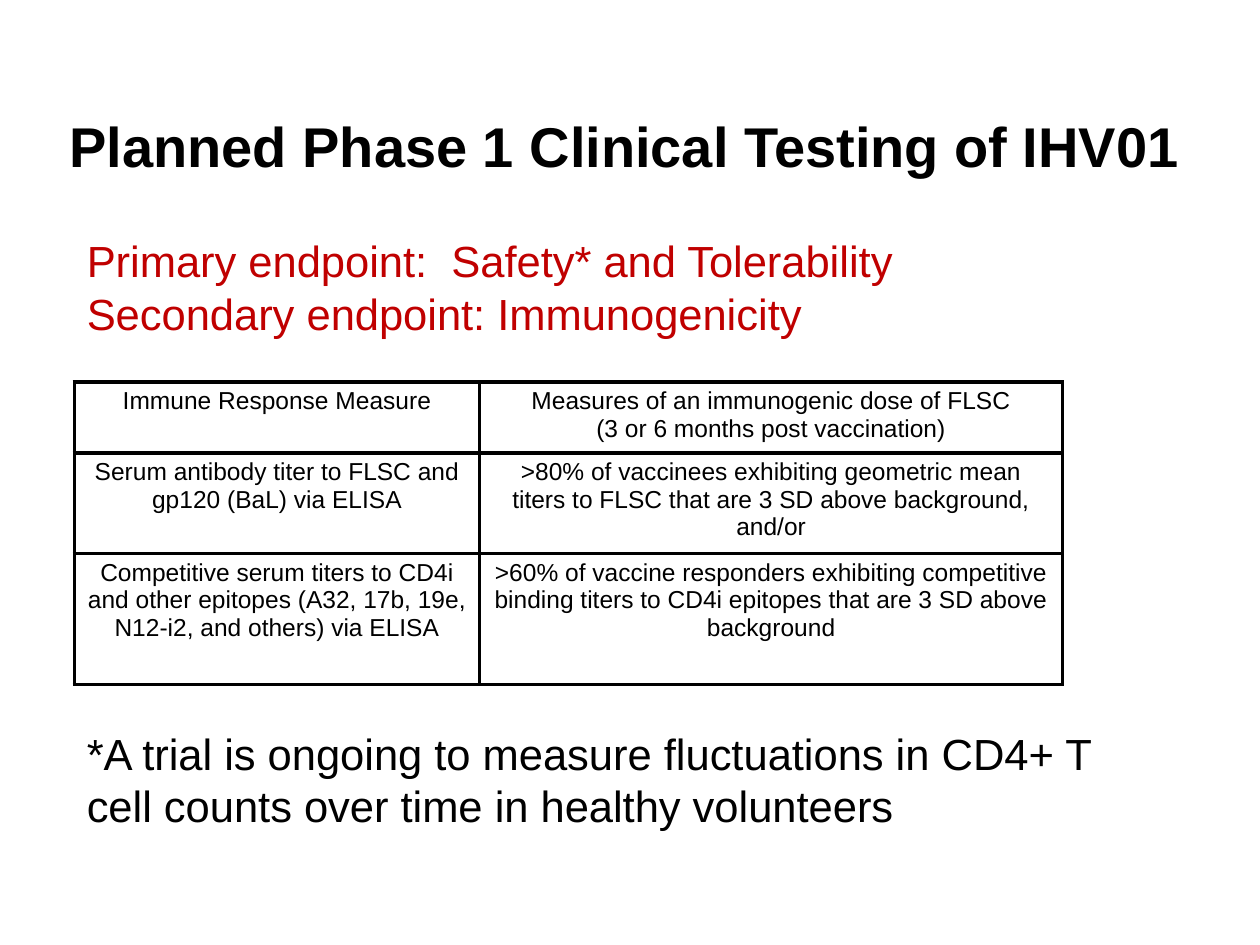
from pptx import Presentation
from pptx.util import Cm, Pt
from pptx.dml.color import RGBColor
from pptx.enum.text import MSO_ANCHOR, MSO_AUTO_SIZE, PP_ALIGN
from pptx.oxml import parse_xml
from pptx.oxml.ns import nsdecls

BLACK = RGBColor(0x00, 0x00, 0x00)
WHITE = RGBColor(0xFF, 0xFF, 0xFF)
RED = RGBColor(0xC0, 0x00, 0x00)
FONT = "Arial"

# Content
TITLE = "Planned Phase 1 Clinical Testing of IHV01"
ENDPOINTS = "Primary endpoint:  Safety* and Tolerability\nSecondary endpoint: Immunogenicity"
FOOTNOTE = ("*A trial is ongoing to measure fluctuations in CD4+ T "
            "cell counts over time in healthy volunteers")
ROWS = [
    ("Immune Response Measure",
     "Measures of an immunogenic dose of FLSC\n(3 or 6 months post vaccination)"),
    ("Serum antibody titer to FLSC and gp120 (BaL) via ELISA",
     ">80% of vaccinees exhibiting geometric mean titers to FLSC "
     "that are 3 SD above background, and/or"),
    ("Competitive serum titers to CD4i and other epitopes "
     "(A32, 17b, 19e, N12-i2, and others) via ELISA",
     ">60% of vaccine responders exhibiting competitive binding titers "
     "to CD4i epitopes that are 3 SD above background"),
]

# Layout, in cm
LEFT = 1.5
COL_WIDTHS = (8.17, 11.75)
ROW_HEIGHTS = (1.43, 2.03, 2.64)


def set_text(tf, text, size, color, align=PP_ALIGN.LEFT, bold=False):
    tf.text = text
    tf.word_wrap = True
    for p in tf.paragraphs:
        p.alignment = align
        for r in p.runs:
            r.font.name, r.font.size, r.font.bold = FONT, Pt(size), bold
            r.font.color.rgb = color


def add_text(slide, text, top, width, color):
    sp = slide.shapes.add_textbox(Cm(LEFT), Cm(top), Cm(width), Cm(2.39))
    set_text(sp.text_frame, text, 24.9, color)
    sp.text_frame.auto_size = MSO_AUTO_SIZE.SHAPE_TO_FIT_TEXT


def add_borders(cell):
    tcPr = cell._tc.get_or_add_tcPr()
    for i, side in enumerate(("lnL", "lnR", "lnT", "lnB")):
        tcPr.insert(i, parse_xml(
            f'<a:{side} {nsdecls("a")} w="{Pt(2.25)}"><a:solidFill>'
            f'<a:srgbClr val="{BLACK}"/></a:solidFill></a:{side}>'))


prs = Presentation()
prs.slide_width, prs.slide_height = Cm(25.4), Cm(19.05)
s = prs.slides.add_slide(prs.slide_layouts[5])

# Title
title = s.shapes.title
title.left, title.top, title.width, title.height = Cm(1.07), Cm(2.03), Cm(23.06), Cm(1.78)
set_text(title.text_frame, TITLE, 32, BLACK, PP_ALIGN.CENTER, bold=True)
title.text_frame.vertical_anchor = MSO_ANCHOR.MIDDLE

# Endpoints
add_text(s, ENDPOINTS, 4.6, 17.88, RED)

# Immune response table
table = s.shapes.add_table(len(ROWS), len(COL_WIDTHS), Cm(LEFT), Cm(7.7),
                           Cm(sum(COL_WIDTHS)), Cm(sum(ROW_HEIGHTS))).table
for column, width in zip(table.columns, COL_WIDTHS):
    column.width = Cm(width)
for row, height, texts in zip(table.rows, ROW_HEIGHTS, ROWS):
    row.height = Cm(height)
    for cell, text in zip(row.cells, texts):
        set_text(cell.text_frame, text, 14, BLACK, PP_ALIGN.CENTER)
        cell.margin_left = cell.margin_right = Cm(0.23)
        cell.margin_top = cell.margin_bottom = Cm(0.11)
        cell.fill.solid()
        cell.fill.fore_color.rgb = WHITE
        add_borders(cell)

# Footnote
add_text(s, FOOTNOTE, 14.53, 21.06, BLACK)

prs.save("out.pptx")
